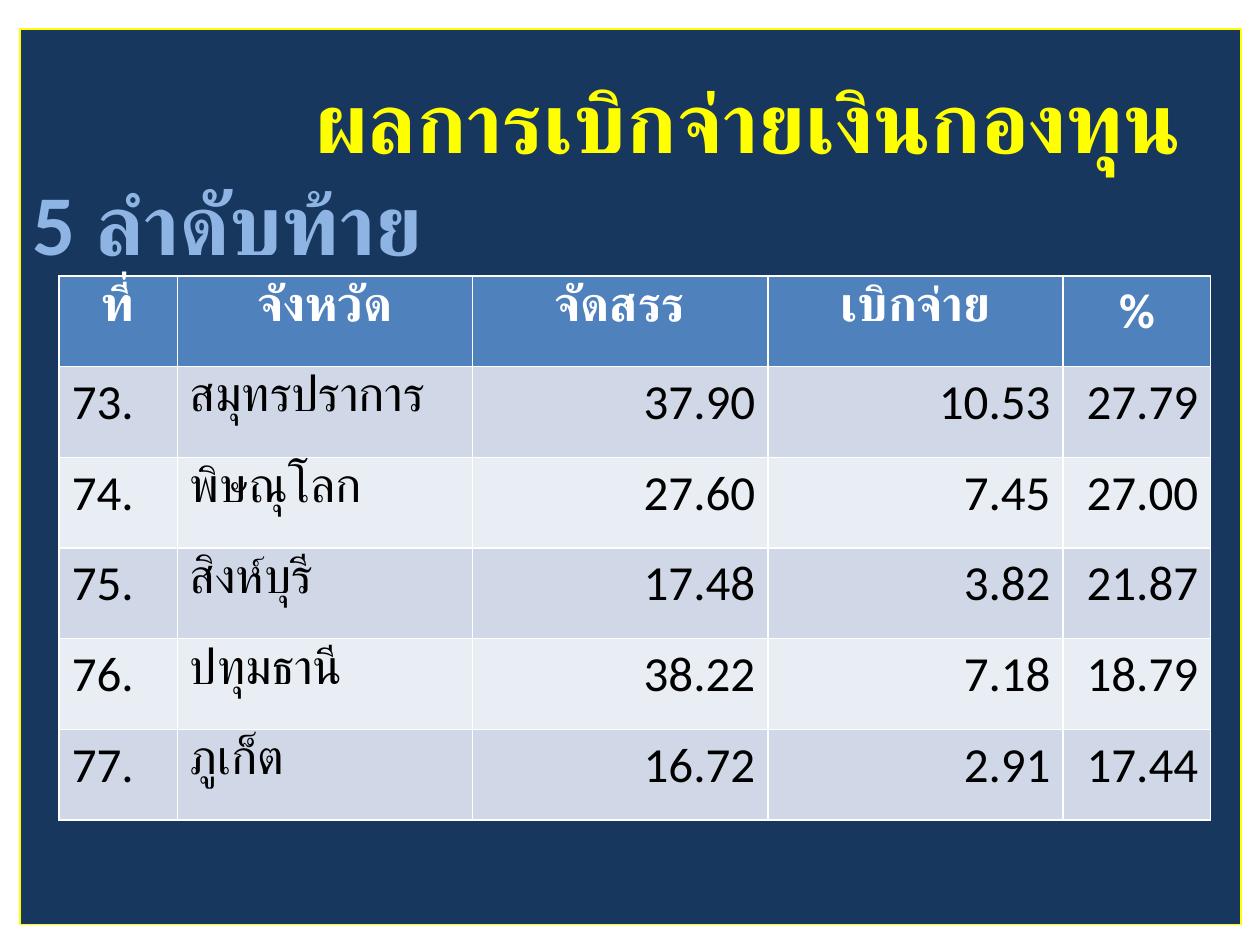
from pptx import Presentation
from pptx.dml.color import RGBColor
from pptx.enum.text import MSO_ANCHOR, PP_ALIGN
from pptx.util import Inches, Pt

FONT = "Calibri"
# Title lines: text, colour, left indent in inches
TITLE_LINES = [
    ("ผลการเบิกจ่ายเงินกองทุน", "FFFF00", 2.24),
    ("5 ลำดับท้าย", "8EB4E3", 0),
]
HEADERS = ["ที่", "จังหวัด", "จัดสรร", "เบิกจ่าย", "%"]
PROVINCES = [
    ("73.", "สมุทรปราการ", "37.90", "10.53", "27.79"),
    ("74.", "พิษณุโลก", "27.60", "7.45", "27.00"),
    ("75.", "สิงห์บุรี", "17.48", "3.82", "21.87"),
    ("76.", "ปทุมธานี", "38.22", "7.18", "18.79"),
    ("77.", "ภูเก็ต", "16.72", "2.91", "17.44"),
]
COLUMN_SHARES = [4, 10, 10, 10, 5]
COLUMN_ALIGNMENTS = [PP_ALIGN.LEFT] * 2 + [PP_ALIGN.RIGHT] * 3
BANDS = ["D0D8E8", "E9EDF4"]
TABLE_WIDTH, ROW_HEIGHT = 9.14, 0.72


def color(hex_code):
    return RGBColor.from_string(hex_code)


def fill(target, hex_code):
    target.fill.solid()
    target.fill.fore_color.rgb = color(hex_code)


def style_font(paragraph, size, hex_code, bold):
    font = paragraph.font
    font.name, font.size, font.bold = FONT, Pt(size), bold
    font.color.rgb = color(hex_code)


presentation = Presentation()
presentation.slide_width, presentation.slide_height = Inches(10), Inches(7.5)
slide = presentation.slides.add_slide(presentation.slide_layouts[5])

# Title placeholder doubles as the dark panel
title = slide.shapes.title
title.left, title.top = Inches(0.16), Inches(0.23)
title.width, title.height = Inches(9.69), Inches(7.11)
fill(title, "17375E")
title.line.color.rgb = color("FFFF00")
title.line.width = Pt(0.75)
frame = title.text_frame
frame.vertical_anchor = MSO_ANCHOR.TOP
frame.margin_top = Inches(0.31)
frame.text = "\n".join(text for text, _, _ in TITLE_LINES)
for paragraph, (_, hex_code, indent) in zip(frame.paragraphs, TITLE_LINES):
    paragraph.alignment = PP_ALIGN.LEFT
    paragraph._p.get_or_add_pPr().set("marL", str(Inches(indent)))
    style_font(paragraph, 48.6, hex_code, True)

# Table of the last five provinces
rows = [HEADERS, *PROVINCES]
table = slide.shapes.add_table(
    len(rows), len(HEADERS), Inches(0.47), Inches(2.19),
    Inches(TABLE_WIDTH), Inches(ROW_HEIGHT * len(rows))).table
for column, share in zip(table.columns, COLUMN_SHARES):
    column.width = Inches(TABLE_WIDTH * share / sum(COLUMN_SHARES))
for row_index, values in enumerate(rows):
    is_header = row_index == 0
    for column_index, value in enumerate(values):
        cell = table.cell(row_index, column_index)
        cell.text = value
        fill(cell, "4F81BD" if is_header else BANDS[(row_index - 1) % 2])
        paragraph = cell.text_frame.paragraphs[0]
        paragraph.alignment = PP_ALIGN.CENTER if is_header else COLUMN_ALIGNMENTS[column_index]
        style_font(paragraph, 28, "FFFFFF" if is_header else "000000", is_header)

presentation.save("out.pptx")
